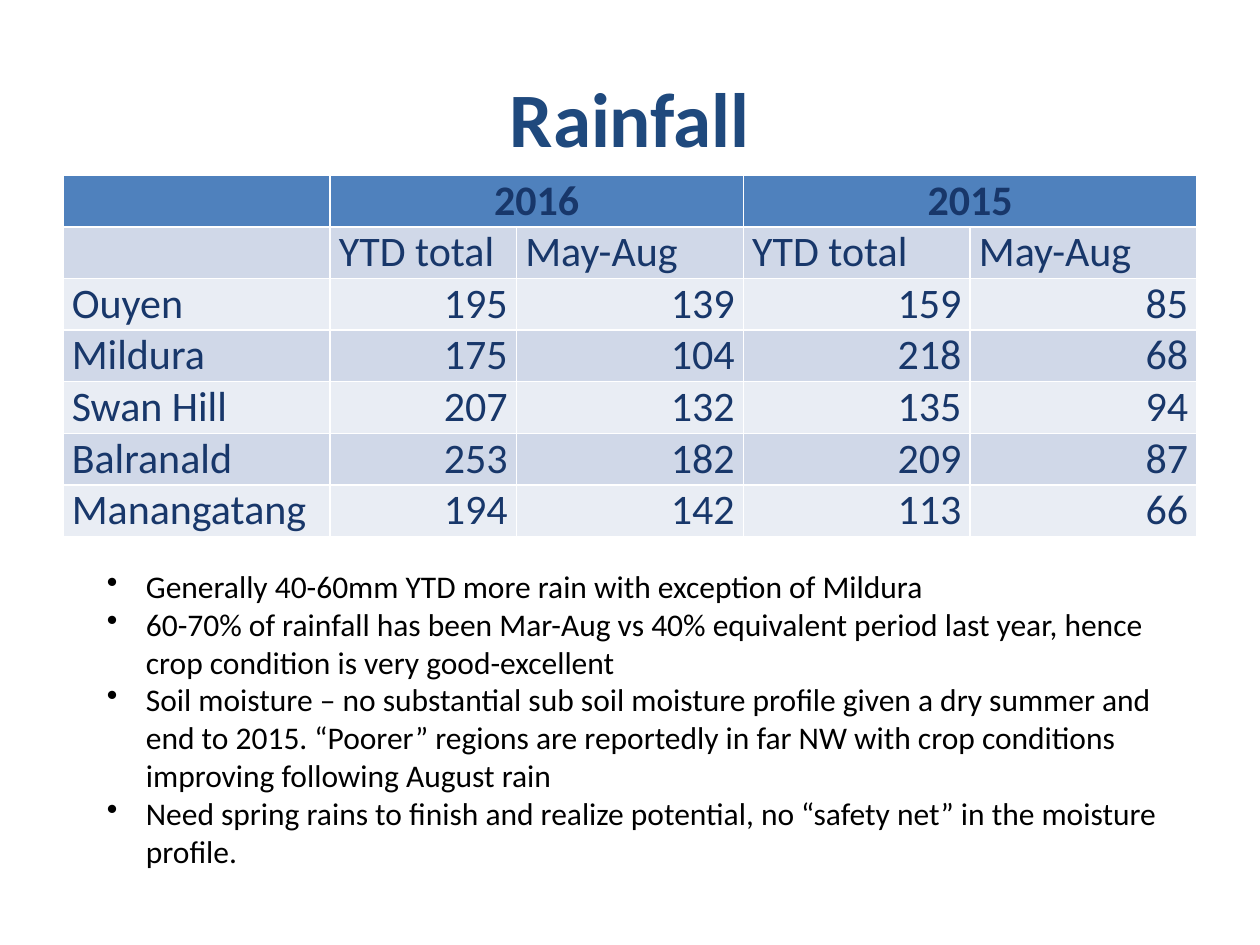
from lxml import etree
from pptx import Presentation
from pptx.dml.color import RGBColor
from pptx.enum.text import MSO_ANCHOR, PP_ALIGN
from pptx.oxml.ns import qn
from pptx.util import Inches, Pt

LEFT, CENTER, RIGHT = PP_ALIGN.LEFT, PP_ALIGN.CENTER, PP_ALIGN.RIGHT

FONT = "Calibri"
TITLE_COLOR, TABLE_TEXT, BODY_TEXT = "1F497D", "18376A", "000000"
HEADER_FILL = "4F81BD"
BAND_FILLS = ("D0D8E8", "E9EDF4")

TITLE = "Rainfall"
RAINFALL = [
    ("", "2016", "", "2015", ""),
    ("", "YTD total", "May-Aug", "YTD total", "May-Aug"),
    ("Ouyen", 195, 139, 159, 85),
    ("Mildura", 175, 104, 218, 68),
    ("Swan Hill", 207, 132, 135, 94),
    ("Balranald", 253, 182, 209, 87),
    ("Manangatang", 194, 142, 113, 66),
]
YEAR_COLUMNS = (1, 3)
COLUMN_WIDTHS = (2.12, 1.48, 1.8, 1.8, 1.8)
ROW_HEIGHT = 0.41
COMMENTS = [
    "Generally 40-60mm YTD more rain with exception of Mildura",
    "60-70% of rainfall has been Mar-Aug vs 40% equivalent period last year, "
    "hence crop condition is very good-excellent",
    "Soil moisture – no substantial sub soil moisture profile given a dry summer "
    "and end to 2015. “Poorer” regions are reportedly in far NW with crop "
    "conditions improving following August rain",
    "Need spring rains to finish and realize potential, no “safety net” in the "
    "moisture profile.",
]
BULLET_INDENT = Inches(0.31)


def rgb(color):
    return RGBColor.from_string(color)


def write(paragraph, text, size, color, bold=False, align=LEFT):
    paragraph.text = text
    paragraph.alignment = align
    font = paragraph.font
    font.name, font.size, font.bold = FONT, Pt(size), bold
    font.color.rgb = rgb(color)


def add_bullet(paragraph):
    properties = paragraph._p.get_or_add_pPr()
    properties.set("marL", str(BULLET_INDENT))
    properties.set("indent", str(-BULLET_INDENT))
    bullet = etree.Element(qn("a:buChar"), char="•")
    properties.insert(0, bullet)  # bullets precede the default run properties


def add_text_frame(slide, left, top, width, height):
    box = slide.shapes.add_textbox(
        Inches(left), Inches(top), Inches(width), Inches(height))
    box.text_frame.word_wrap = True
    return box.text_frame


def add_rainfall_table(slide):
    table = slide.shapes.add_table(
        len(RAINFALL), len(COLUMN_WIDTHS), Inches(0.5), Inches(1.39),
        Inches(sum(COLUMN_WIDTHS)), Inches(ROW_HEIGHT * len(RAINFALL))).table
    for column, width in zip(table.columns, COLUMN_WIDTHS):
        column.width = Inches(width)
    for r, values in enumerate(RAINFALL):
        table.rows[r].height = Inches(ROW_HEIGHT)
        header = r == 0
        for c, value in enumerate(values):
            cell = table.cell(r, c)
            cell.margin_left = cell.margin_right = Inches(0.07)
            cell.margin_top = cell.margin_bottom = 0
            cell.fill.solid()
            cell.fill.fore_color.rgb = rgb(
                HEADER_FILL if header else BAND_FILLS[(r - 1) % 2])
            align = CENTER if header else RIGHT if isinstance(value, int) else LEFT
            write(cell.text_frame.paragraphs[0], str(value), 24, TABLE_TEXT,
                  header, align)
    for c in YEAR_COLUMNS:
        table.cell(0, c).merge(table.cell(0, c + 1))


def main():
    presentation = Presentation()
    presentation.slide_width, presentation.slide_height = Inches(10), Inches(7.5)
    slide = presentation.slides.add_slide(presentation.slide_layouts[6])

    title = add_text_frame(slide, 0.5, 0.3, 9, 1.25)
    title.vertical_anchor = MSO_ANCHOR.MIDDLE
    write(title.paragraphs[0], TITLE, 44, TITLE_COLOR, True, CENTER)

    add_rainfall_table(slide)

    comments = add_text_frame(slide, 0.75, 4.45, 8.75, 2.52)
    for i, comment in enumerate(COMMENTS):
        paragraph = comments.add_paragraph() if i else comments.paragraphs[0]
        write(paragraph, comment, 18, BODY_TEXT)
        add_bullet(paragraph)

    presentation.save("out.pptx")


if __name__ == "__main__":
    main()
